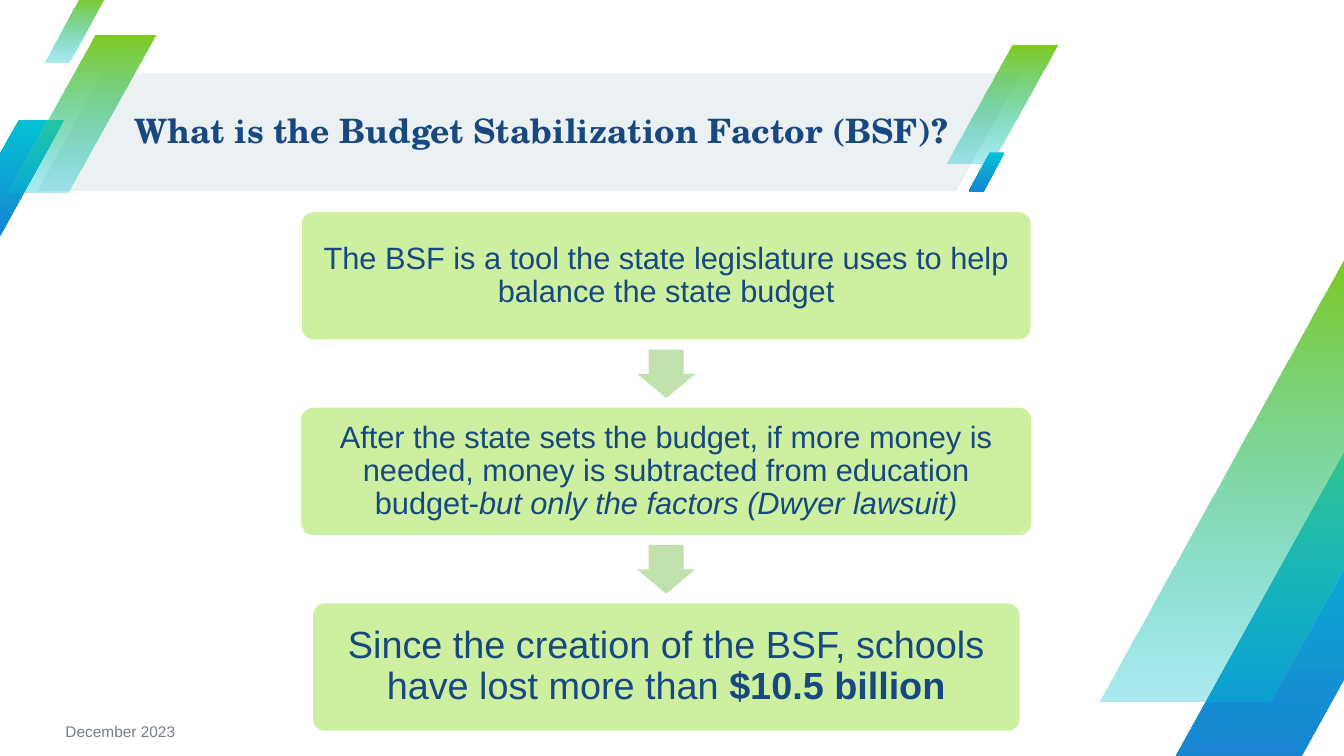
from lxml import etree
from pptx import Presentation
from pptx.dml.color import RGBColor
from pptx.enum.shapes import MSO_SHAPE
from pptx.enum.text import MSO_ANCHOR, MSO_AUTO_SIZE, PP_ALIGN
from pptx.oxml.ns import qn
from pptx.util import Cm, Pt

STRIPE = MSO_SHAPE.PARALLELOGRAM
CARD = MSO_SHAPE.ROUNDED_RECTANGLE
ARROW = MSO_SHAPE.RIGHT_ARROW
MIDDLE = MSO_ANCHOR.MIDDLE
NO_FIT = MSO_AUTO_SIZE.NONE
CENTER, LEFT = PP_ALIGN.CENTER, PP_ALIGN.LEFT

NAVY, GREY, PALE, WHITE = "184880", "757C83", "EBF0F3", "FFFFFF"
CARD_GREEN, ARROW_GREEN = "CDF0A0", "C0E1AC"
BLUE_FADE = ("02C1D3", "1985D2", 100)
GREEN_FADE = ("7FCA20", "02C1D3", 33)

STRIPES = [
    (-1.17, 3.02, 2.79, 2.97, BLUE_FADE),
    (23.85, 1.14, 2.79, 2.97, GREEN_FADE),
    (0.2, 0.89, 3.71, 3.96, GREEN_FADE),
    (1.12, -0.08, 1.55, 1.65, GREEN_FADE),
    (24.41, 3.84, 0.91, 0.99, BLUE_FADE),
    (29.64, 10.85, 7.7, 8.2, BLUE_FADE),
    (27.71, 6.5, 10.49, 11.18, GREEN_FADE),
]

STEPS = [
    (18.44, 22, 0.23, [("The BSF is a tool the state legislature uses to help "
                        "balance the state budget", "")]),
    (18.47, 22, 0.23, [("After the state sets the budget, if more money is needed, "
                        "money is subtracted from education budget-", ""),
                       ("but only the factors (Dwyer lawsuit)", "italic")]),
    (17.88, 27, 0.28, [("Since the creation of the BSF, schools have lost more than ", ""),
                       ("$10.5 billion", "bold")]),
]
FLOW_CENTER, FLOW_TOP, STEP_PITCH, STEP_HEIGHT = 16.79, 5.31, 4.93, 3.28
ARROW_CENTER, ARROW_LENGTH, ARROW_WIDTH = 9.42, 1.22, 1.47


def color(value):
    return RGBColor.from_string(value)


class SlideBuilder:
    body_font = "Arial"
    title_font = "TeX Gyre Schola"

    def __init__(self, slide):
        self.slide = slide

    def style(self, run, size, ink, font=None):
        run.font.name = font or self.body_font
        run.font.size = Pt(size)
        run.font.color.rgb = color(ink)

    def margins(self, frame, inset):
        frame.margin_left = frame.margin_right = Cm(inset)
        frame.margin_top = frame.margin_bottom = Cm(inset)

    def shape(self, kind, left, top, width, height, adjustments, fill=None):
        shape = self.slide.shapes.add_shape(kind, Cm(left), Cm(top), Cm(width), Cm(height))
        shape.shadow.inherit = False
        shape.line.fill.background()
        for index, value in enumerate(adjustments):
            shape.adjustments[index] = value
        if fill:
            shape.fill.solid()
            shape.fill.fore_color.rgb = color(fill)
        return shape

    def stripe(self, left, top, width, height, fade):
        stripe = self.shape(STRIPE, left, top, width, height, [0.59])
        upper, lower, opacity = fade
        stripe.fill.gradient()
        stripe.fill.gradient_angle = 270
        for stop, value in zip(stripe.fill.gradient_stops, (upper, lower)):
            stop.color.rgb = color(value)
        if opacity < 100:
            last_color = list(stripe.fill._fill._gradFill.iter(qn("a:srgbClr")))[-1]
            etree.SubElement(last_color, qn("a:alpha")).set("val", str(opacity * 1000))

    def title(self, text, left, top, width, height):
        title = self.slide.shapes.title
        self.slide.shapes._spTree.append(title._element)
        title.left, title.top = Cm(left), Cm(top)
        title.width, title.height = Cm(width), Cm(height)
        frame = title.text_frame
        frame.text = text
        frame.auto_size = NO_FIT
        frame.word_wrap = True
        frame.vertical_anchor = MIDDLE
        self.margins(frame, 0)
        heading = frame.paragraphs[0]
        heading.alignment = LEFT
        heading.line_spacing = 0.9
        self.style(heading.runs[0], 24, NAVY, self.title_font)
        heading.runs[0].font.bold = True

    def step(self, top, width, size, inset, parts):
        card = self.shape(CARD, FLOW_CENTER - width / 2, top, width, STEP_HEIGHT,
                          [0.1], CARD_GREEN)
        card.line.color.rgb = color(WHITE)
        card.line.width = Pt(2)
        frame = card.text_frame
        frame.word_wrap = True
        frame.vertical_anchor = MIDDLE
        self.margins(frame, inset)
        statement = frame.paragraphs[0]
        statement.alignment = CENTER
        statement.line_spacing = 0.9
        for text, emphasis in parts:
            run = statement.add_run()
            run.text = text
            self.style(run, size, NAVY)
            if emphasis:
                setattr(run.font, emphasis, True)

    def down_arrow(self, center_y):
        arrow = self.shape(ARROW, FLOW_CENTER - ARROW_LENGTH / 2, center_y - ARROW_WIDTH / 2,
                           ARROW_LENGTH, ARROW_WIDTH, [0.6, 0.5], ARROW_GREEN)
        arrow.rotation = 90

    def label(self, text, left, top, width, height):
        label = self.slide.shapes.add_textbox(Cm(left), Cm(top), Cm(width), Cm(height))
        label.text_frame.word_wrap = True
        label.text_frame.text = text
        self.style(label.text_frame.paragraphs[0].runs[0], 11, GREY)


def main():
    deck = Presentation()
    deck.slide_width, deck.slide_height = Cm(33.87), Cm(19.05)
    builder = SlideBuilder(deck.slides.add_slide(deck.slide_layouts[5]))

    builder.shape(STRIPE, 0.94, 1.85, 24.79, 2.97, [0.55], PALE)
    for stripe in STRIPES:
        builder.stripe(*stripe)
    builder.title("What is the Budget Stabilization Factor (BSF)?", 3.38, 1.83, 22.33, 3.02)

    for index, step in enumerate(STEPS):
        builder.step(FLOW_TOP + index * STEP_PITCH, *step)
        if index < len(STEPS) - 1:
            builder.down_arrow(ARROW_CENTER + index * STEP_PITCH)
    builder.label("December 2023", 1.4, 18.08, 4.37, 0.74)

    deck.save("out.pptx")


if __name__ == "__main__":
    main()
